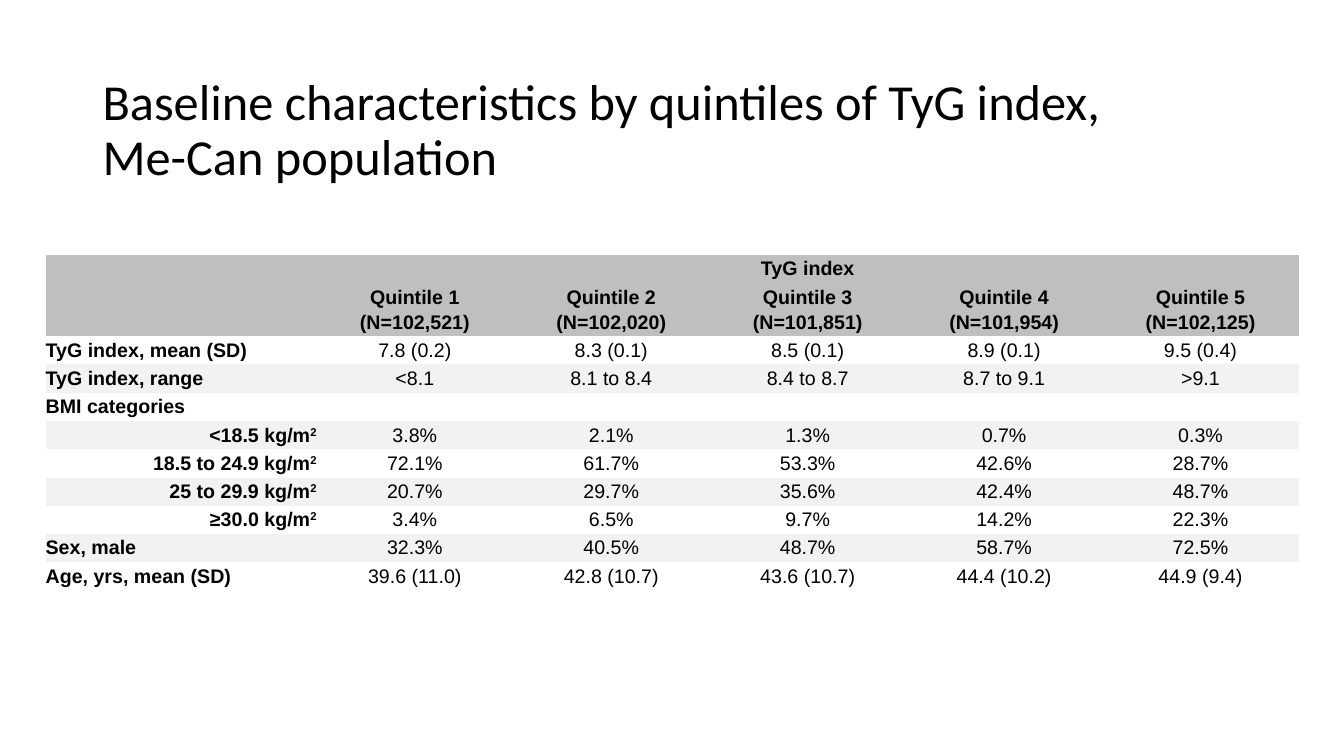
from dataclasses import dataclass

from lxml.etree import SubElement
from pptx import Presentation
from pptx.dml.color import RGBColor as Rgb
from pptx.enum.text import MSO_ANCHOR as Anchor, MSO_AUTO_SIZE as Fit, PP_ALIGN as Align
from pptx.oxml.ns import qn
from pptx.slide import Slide
from pptx.table import Table, _Cell as Cell
from pptx.text.text import _Paragraph as Para
from pptx.util import Cm, Pt


@dataclass(frozen=True)
class Theme:
    ink: Rgb = Rgb.from_string("000000")
    head: Rgb = Rgb.from_string("BFBFBF")
    band: Rgb = Rgb.from_string("F2F2F2")
    title: int = 36
    text: int = 14
    title_font: str = "Calibri"
    text_font: str = "Arial"


@dataclass(frozen=True)
class Row:
    label: str
    values: tuple[str, ...] = ()
    power: str = ""  # raised figure; such labels sit on the right


THEME = Theme()
NO_GRID = "{2D5ABB26-0587-4C30-8999-92F81FD0307C}"
TITLE = ("Baseline characteristics by quintiles of TyG index,", "Me-Can population")
COUNTS = ("102,521", "102,020", "101,851", "101,954", "102,125")
ROWS = (
    Row("TyG index, mean (SD)", ("7.8 (0.2)", "8.3 (0.1)", "8.5 (0.1)", "8.9 (0.1)", "9.5 (0.4)")),
    Row("TyG index, range", ("<8.1", "8.1 to 8.4", "8.4 to 8.7", "8.7 to 9.1", ">9.1")),
    Row("BMI categories"),
    Row("<18.5 kg/m", ("3.8%", "2.1%", "1.3%", "0.7%", "0.3%"), "2"),
    Row("18.5 to 24.9 kg/m", ("72.1%", "61.7%", "53.3%", "42.6%", "28.7%"), "2"),
    Row("25 to 29.9 kg/m", ("20.7%", "29.7%", "35.6%", "42.4%", "48.7%"), "2"),
    Row("≥30.0 kg/m", ("3.4%", "6.5%", "9.7%", "14.2%", "22.3%"), "2"),
    Row("Sex, male", ("32.3%", "40.5%", "48.7%", "58.7%", "72.5%")),
    Row("Age, yrs, mean (SD)", ("39.6 (11.0)", "42.8 (10.7)", "43.6 (10.7)", "44.4 (10.2)", "44.9 (9.4)")),
)


def add_run(para: Para, text: str, size: int, face: str, bold: bool = False, raised: bool = False) -> None:
    run = para.add_run()
    run.text = text
    font = run.font
    font.size, font.name, font.bold = Pt(size), face, bold
    font.color.rgb = THEME.ink
    if raised:
        run._r.get_or_add_rPr().set("baseline", "30000")


def add_title(slide: Slide) -> None:
    box = slide.shapes.title
    box.left, box.top, box.width, box.height = Cm(2.33), Cm(1.48), Cm(29.21), Cm(3.68)
    SubElement(box._element.spPr, qn("a:prstGeom")).set("prst", "roundRect")
    frame = box.text_frame
    frame.auto_size, frame.word_wrap = Fit.NONE, True
    frame.vertical_anchor = Anchor.MIDDLE
    para = frame.paragraphs[0]
    para.alignment, para.line_spacing, para.space_after = Align.LEFT, 0.9, Pt(12)
    for i, line in enumerate(TITLE):
        if i:
            para.add_line_break()
        add_run(para, line, THEME.title, THEME.title_font)


def style_cell(cell: Cell, fill: Rgb | None, side: float) -> None:
    cell.vertical_anchor = Anchor.MIDDLE
    cell.margin_left = cell.margin_right = Cm(side)
    cell.margin_top = cell.margin_bottom = Cm(0.06)
    if fill is None:
        cell.fill.background()
    else:
        cell.fill.solid()
        cell.fill.fore_color.rgb = fill
    # Empty cells need a small type size to keep their rows low
    end = SubElement(cell.text_frame.paragraphs[0]._p, qn("a:endParaRPr"))
    end.set("sz", str(THEME.text * 100))


def fill_cell(cell: Cell, lines: tuple[str, ...], align: Align, bold: bool, power: str = "") -> None:
    frame = cell.text_frame
    for i, line in enumerate(lines):
        para = frame.add_paragraph() if i else frame.paragraphs[0]
        para.alignment = align
        para.space_before = para.space_after = Pt(1)
        add_run(para, line, THEME.text, THEME.text_font, bold)
        if power:
            add_run(para, power, THEME.text, THEME.text_font, bold, True)


def add_grid(slide: Slide) -> Table:
    rows, cols = len(ROWS) + 2, len(COUNTS) + 1
    shape = slide.shapes.add_table(rows, cols, Cm(1.15), Cm(6.42), Cm(31.58), Cm(8.43))
    for node in shape._element.iter(qn("a:tableStyleId")):
        node.text = NO_GRID
    table = shape.table
    table.first_row = table.horz_banding = False
    for i, col in enumerate(table.columns):
        col.width = Cm(4.95 if i else 6.83)
    for i, row in enumerate(table.rows):
        row.height = Cm(1.33 if i == 1 else 0.71)
        fill = THEME.head if i < 2 else THEME.band if i % 2 else None
        for j, cell in enumerate(row.cells):
            style_cell(cell, fill, 0.18 if i and j else 0)
    return table


def fill_grid(table: Table) -> None:
    # Header
    table.cell(0, 1).merge(table.cell(0, len(COUNTS)))
    fill_cell(table.cell(0, 1), ("TyG index",), Align.CENTER, True)
    for j, count in enumerate(COUNTS, 1):
        fill_cell(table.cell(1, j), (f"Quintile {j}", f"(N={count})"), Align.CENTER, True)
    # Body
    for i, row in enumerate(ROWS, 2):
        align = Align.RIGHT if row.power else Align.LEFT
        fill_cell(table.cell(i, 0), (row.label,), align, True, row.power)
        for j, value in enumerate(row.values, 1):
            fill_cell(table.cell(i, j), (value,), Align.CENTER, False)


def main() -> None:
    deck = Presentation()
    deck.slide_width, deck.slide_height = Cm(33.87), Cm(19.05)
    slide = deck.slides.add_slide(deck.slide_layouts[5])
    add_title(slide)
    fill_grid(add_grid(slide))
    deck.save("out.pptx")


if __name__ == "__main__":
    main()
